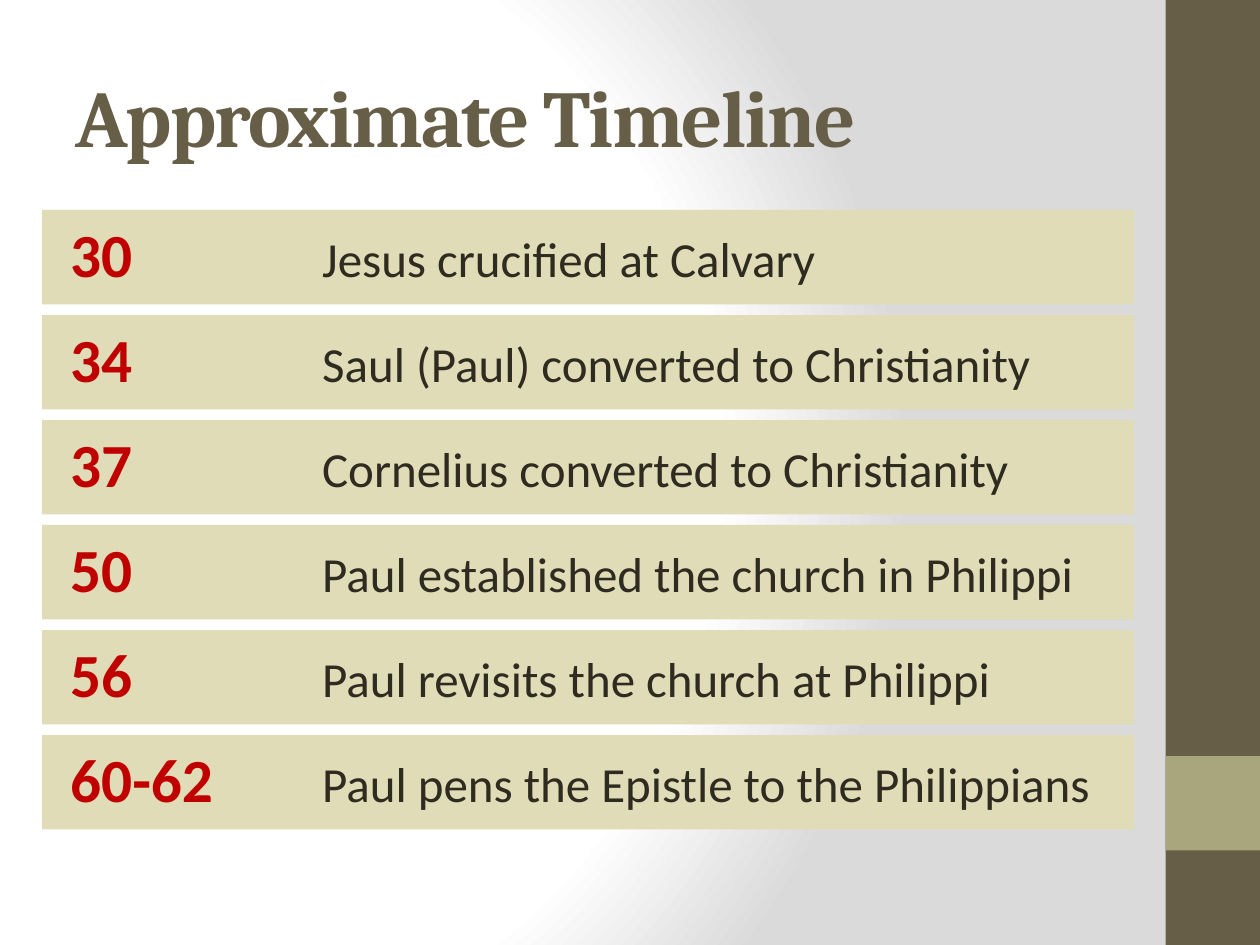
import pptx
import pptx.util
import pptx.oxml
import pptx.dml.color
import pptx.enum.shapes
import pptx.enum.text

PX = 9525  # EMU per px, 96 px to the inch
RGB = pptx.dml.color.RGBColor
BROWN = RGB(0x67, 0x5E, 0x47)
OLIVE = RGB(0xA9, 0xA5, 0x7C)
SAND = RGB(0xDF, 0xDC, 0xB7)
RED = RGB(0xC0, 0x00, 0x00)
INK = RGB(0x2F, 0x2B, 0x20)

TITLE_FORMAT = {"name": "Cambria", "size": pptx.util.Pt(46), "bold": True}
YEAR_FORMAT = {"name": "Calibri", "size": pptx.util.Pt(35), "bold": True}
EVENT_FORMAT = {"name": "Calibri", "size": pptx.util.Pt(28), "bold": False}

BACKGROUND = """
<p:bg xmlns:p="http://schemas.openxmlformats.org/presentationml/2006/main"
      xmlns:a="http://schemas.openxmlformats.org/drawingml/2006/main">
  <p:bgPr>
    <a:gradFill rotWithShape="1">
      <a:gsLst>
        <a:gs pos="0"><a:srgbClr val="FFFFFF"/></a:gs>
        <a:gs pos="75000"><a:srgbClr val="FFFFFF"/></a:gs>
        <a:gs pos="100000"><a:srgbClr val="DADADA"/></a:gs>
      </a:gsLst>
      <a:path path="circle">
        <a:fillToRect l="20000" t="50000" r="100000" b="50000"/>
      </a:path>
    </a:gradFill>
    <a:effectLst/>
  </p:bgPr>
</p:bg>"""

# The tabs after each year bring every event to the same stop.
TIMELINE = [
    ("30\t\t", "Jesus crucified at Calvary"),
    ("34\t\t", "Saul (Paul) converted to Christianity"),
    ("37\t\t", "Cornelius converted to Christianity"),
    ("50\t\t", "Paul established the church in Philippi"),
    ("56\t\t", "Paul revisits the church at Philippi"),
    ("60-62\t", "Paul pens the Epistle to the Philippians"),
]
ROW_TOP, ROW_HEIGHT, ROW_PITCH = 160, 72, 80
ENTRY_FORMAT = {"marL": 12 * PX, "indent": 0, "defTabSz": 96 * PX}


def add_band(left, top, width, height, color):
    """Add a plain filled rectangle without outline or shadow."""
    band = slide.shapes.add_shape(
        pptx.enum.shapes.MSO_SHAPE.RECTANGLE,
        left * PX, top * PX, width * PX, height * PX)
    band.shadow.inherit = False
    band.fill.solid()
    band.fill.fore_color.rgb = color
    band.line.fill.background()
    return band


def add_run(paragraph, text, color, font_format):
    run = paragraph.add_run()
    run.text = text
    run.font.color.rgb = color
    for attribute, value in font_format.items():
        setattr(run.font, attribute, value)
    return run


presentation = pptx.Presentation()
presentation.slide_width = 960 * PX
presentation.slide_height = 720 * PX
slide = presentation.slides.add_slide(presentation.slide_layouts[6])
slide.element.cSld.insert(0, pptx.oxml.parse_xml(BACKGROUND))

add_band(888, 0, 72, 720, BROWN)
add_band(888, 576, 72, 72, OLIVE)

title = slide.shapes.add_textbox(48 * PX, 28 * PX, 800 * PX, 120 * PX)
title.text_frame.word_wrap = True
title.text_frame.vertical_anchor = pptx.enum.text.MSO_ANCHOR.MIDDLE
heading = add_run(title.text_frame.paragraphs[0], "Approximate Timeline",
                  BROWN, TITLE_FORMAT)
heading.font._element.set("spc", "-100")

for index, (year, event) in enumerate(TIMELINE):
    row = add_band(32, ROW_TOP + index * ROW_PITCH, 832, ROW_HEIGHT, SAND)
    row.text_frame.word_wrap = True
    row.text_frame.vertical_anchor = pptx.enum.text.MSO_ANCHOR.TOP
    entry = row.text_frame.paragraphs[0]
    entry.alignment = pptx.enum.text.PP_ALIGN.LEFT
    for attribute, value in ENTRY_FORMAT.items():
        entry._p.get_or_add_pPr().set(attribute, str(value))
    add_run(entry, year, RED, YEAR_FORMAT)
    add_run(entry, event, INK, EVENT_FORMAT)

presentation.save("out.pptx")
